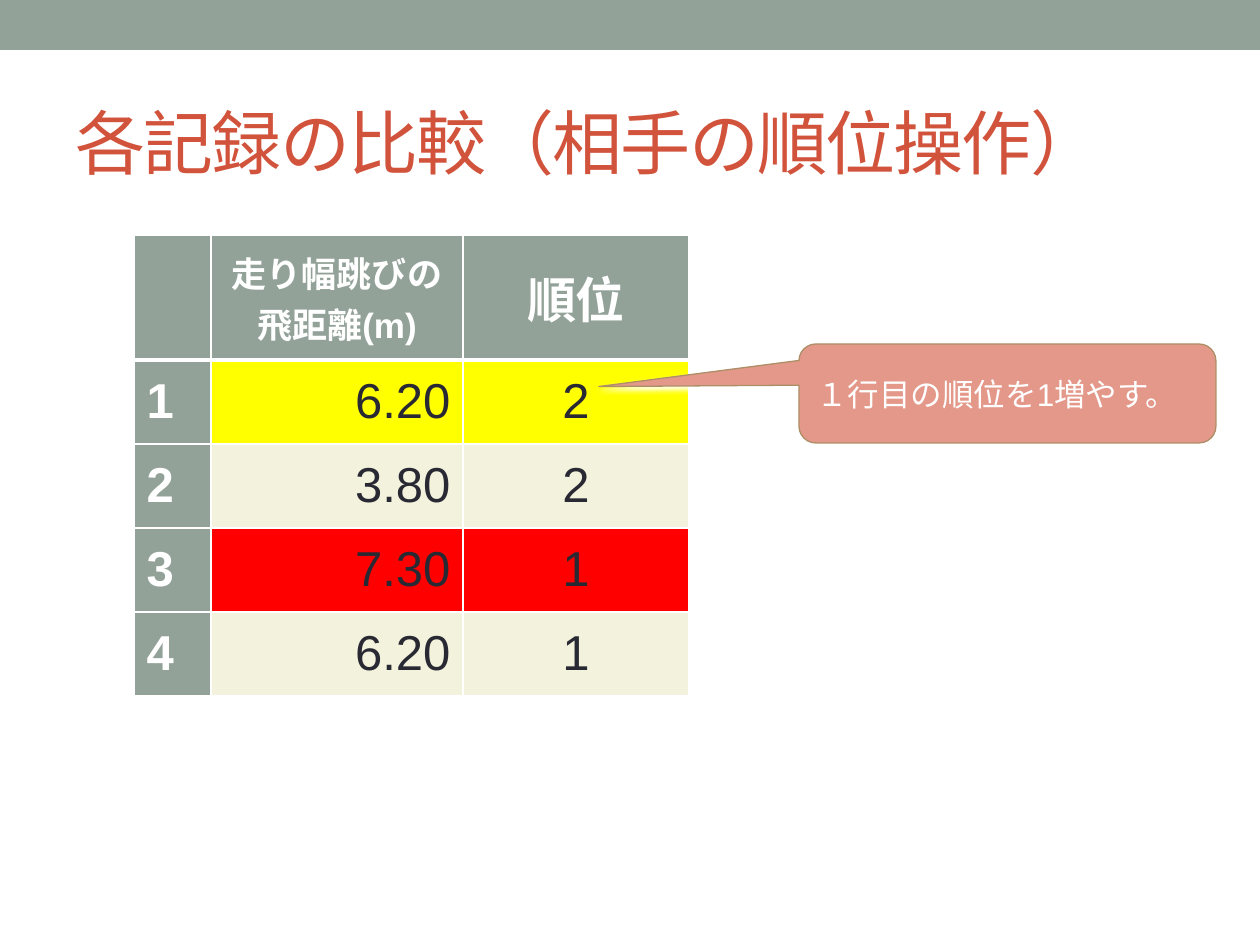
"""Build a slide comparing long jump records, with a callout on the ranking."""
from lxml import etree
from pptx import Presentation
from pptx.dml.color import RGBColor
from pptx.enum.shapes import MSO_SHAPE
from pptx.enum.text import MSO_ANCHOR, PP_ALIGN
from pptx.oxml.ns import qn
from pptx.util import Emu, Pt

RECT = MSO_SHAPE.RECTANGLE
CALLOUT = MSO_SHAPE.ROUNDED_RECTANGULAR_CALLOUT
MIDDLE = MSO_ANCHOR.MIDDLE
LEFT, CENTER, RIGHT = PP_ALIGN.LEFT, PP_ALIGN.CENTER, PP_ALIGN.RIGHT
TITLE_ONLY = 5
FONT = "Arial"
COLORS = {
    "sage": "93A299", "white": "FFFFFF", "title": "D2533C", "ink": "292934",
    "cream": "F3F2DC", "yellow": "FFFF00", "red": "FF0000",
    "salmon": "E4988A", "edge": "AD8F67", "shadow": "000000",
}
HEADERS = [("", 20), ("走り幅跳びの\n飛距離(m)", 20), ("順位", 28)]
RECORDS = [
    ("1", "6.20", "2", "yellow"),
    ("2", "3.80", "2", "cream"),
    ("3", "7.30", "1", "red"),
    ("4", "6.20", "1", "cream"),
]


def px(n):
    return Emu(round(n * 914400 / 126))


def rgb(name):
    return RGBColor.from_string(COLORS[name])


def add_color(parent, name):
    fill = etree.SubElement(parent, qn("a:solidFill"))
    return etree.SubElement(fill, qn("a:srgbClr"), val=COLORS[name])


class Deck:
    def __init__(self, prs):
        self.slide = prs.slides.add_slide(prs.slide_layouts[TITLE_ONLY])

    def text(self, tf, text, size, color, align=LEFT, bold=False):
        tf.text = text
        tf.vertical_anchor = MIDDLE
        for p in tf.paragraphs:
            p.alignment = align
            p.font.name = FONT
            p.font.size = Pt(size)
            p.font.bold = bold
            p.font.color.rgb = rgb(color)

    def title(self, text, x, y, w, h):
        sp = self.slide.shapes.title
        sp.left, sp.top, sp.width, sp.height = map(px, (x, y, w, h))
        self.text(sp.text_frame, text, 40, "title")
        r = sp.text_frame.paragraphs[0].runs[0]
        r._r.get_or_add_rPr().set("spc", "-100")

    def shape(self, kind, x, y, w, h, fill):
        sp = self.slide.shapes.add_shape(kind, *map(px, (x, y, w, h)))
        sp.shadow.inherit = False
        sp.fill.solid()
        sp.fill.fore_color.rgb = rgb(fill)
        sp.line.fill.background()
        return sp

    def callout(self, text, x, y, w, h, adjustments):
        sp = self.shape(CALLOUT, x, y, w, h, "salmon")
        for i, value in enumerate(adjustments):
            sp.adjustments[i] = value
        sp.line.color.rgb = rgb("edge")
        sp.line.width = Pt(0.75)
        effects = sp._element.spPr.find(qn("a:effectLst"))
        shadow = etree.SubElement(
            effects, qn("a:outerShdw"), blurRad=str(Pt(3)), dist=str(Pt(2)),
            dir="2700000", rotWithShape="0")
        etree.SubElement(add_color(shadow, "shadow"), qn("a:alpha"), val="60000")
        self.text(sp.text_frame, text, 18, "white")
        sp.text_frame.word_wrap = True

    def cell(self, cell, fill, top=1, bottom=1):
        tcPr = cell._tc.get_or_add_tcPr()
        for side, width in zip("LRTB", (1, 1, top, bottom)):
            ln = etree.SubElement(tcPr, qn(f"a:ln{side}"), w=str(Pt(width)))
            add_color(ln, "white")
        cell.fill.solid()
        cell.fill.fore_color.rgb = rgb(fill)

    def table(self, x, y, cols, rows):
        table = self.slide.shapes.add_table(
            len(rows), len(cols), px(x), px(y), px(sum(cols)), px(sum(rows))).table
        for column, w in zip(table.columns, cols):
            column.width = px(w)
        for row, h in zip(table.rows, rows):
            row.height = px(h)
        for j, (text, size) in enumerate(HEADERS):
            cell = table.cell(0, j)
            self.cell(cell, "sage", bottom=3)
            if text:
                self.text(cell.text_frame, text, size, "white", CENTER, True)
                cell.vertical_anchor = MIDDLE
        for i, (*texts, mark) in enumerate(RECORDS, 1):
            for j, (text, align) in enumerate(zip(texts, (LEFT, RIGHT, CENTER))):
                cell = table.cell(i, j)
                label = j == 0
                self.cell(cell, "sage" if label else mark, top=3 if i == 1 else 1)
                self.text(cell.text_frame, text, 28,
                          "white" if label else "ink", align, label)
                cell.vertical_anchor = MIDDLE


def main():
    prs = Presentation()
    prs.slide_width, prs.slide_height = px(1260), px(945)
    deck = Deck(prs)
    deck.shape(RECT, 0, 0, 1260, 50, "sage")
    deck.title("各記録の比較（相手の順位操作）", 63, 73, 1134, 136)
    deck.table(134, 235, [77, 252, 226], [125] + [84] * len(RECORDS))
    deck.callout("１行目の順位を1増やす。", 799, 344, 417, 99, (-0.98, -0.07, 0.17))
    prs.save("out.pptx")


if __name__ == "__main__":
    main()
